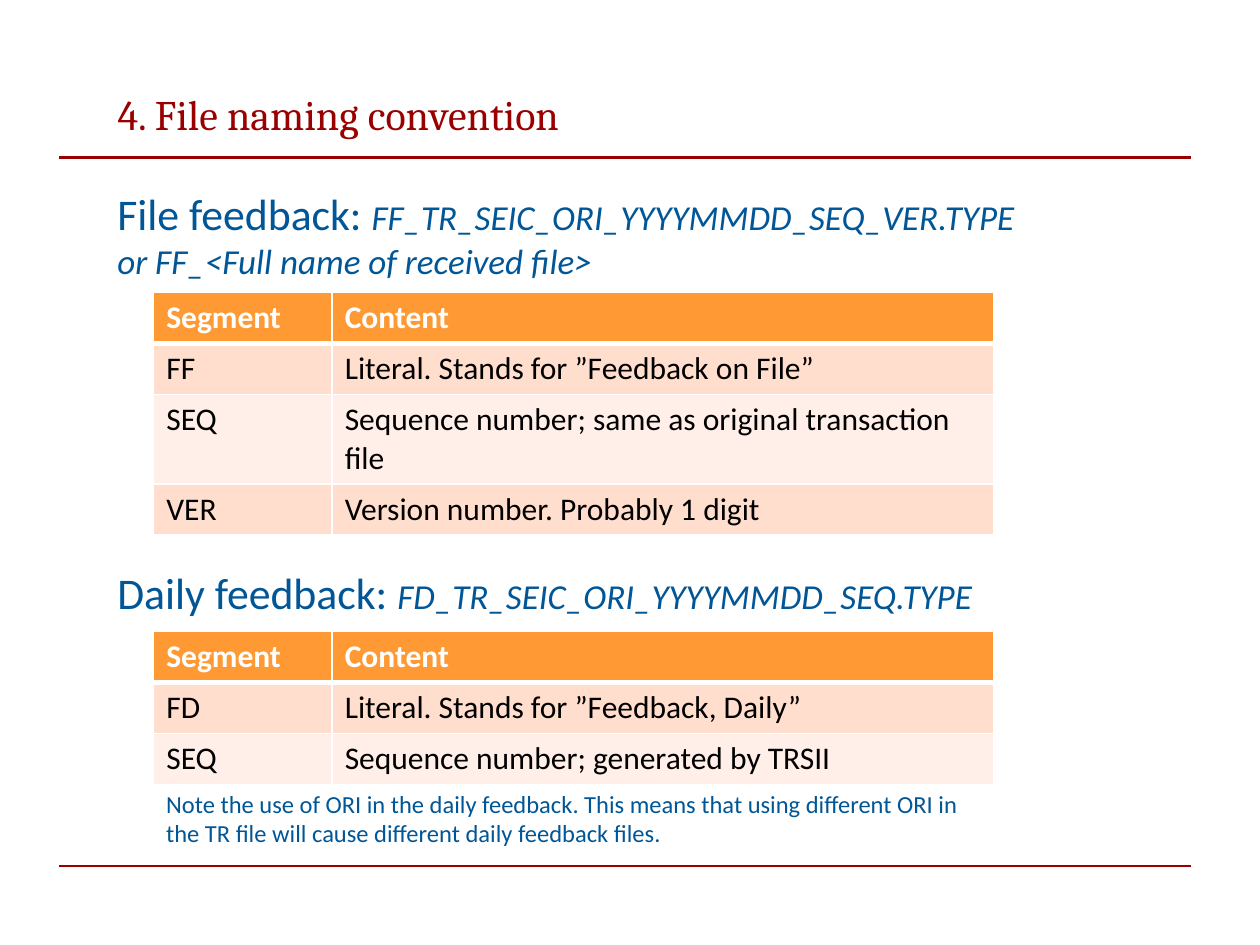
from typing import NamedTuple

from lxml import etree
from pptx import Presentation
from pptx import util as u
from pptx.dml.color import RGBColor
from pptx.enum import shapes, text
from pptx.oxml.ns import qn

RED = RGBColor(0x99, 0x00, 0x00)
BLUE = RGBColor(0x00, 0x56, 0x96)
ORANGE = RGBColor(0xFF, 0x99, 0x33)
PEACH = RGBColor(0xFF, 0xDE, 0xCE)
PALE = RGBColor(0xFF, 0xEF, 0xE8)
WHITE = RGBColor(0xFF, 0xFF, 0xFF)
BLACK = RGBColor(0x00, 0x00, 0x00)

# Grid of 120 columns by 90 rows
WIDTH, HEIGHT = u.Inches(10), u.Inches(7.5)
MARGIN, INDENT = 10, 14.64
SEGMENT_COLS, CONTENT_COLS = 17, 63
TABLE_COLS = SEGMENT_COLS + CONTENT_COLS
ROW = 4.87


class Box(NamedTuple):
    col: float
    row: float
    cols: float
    rows: float


class Heading(NamedTuple):
    box: Box
    lead: str
    pattern: list[str]


class Segments(NamedTuple):
    top: float
    rows: list[tuple[str, str]]


HEADINGS = [
    Heading(Box(MARGIN, 52.56, 104.88, 7.56), "Daily feedback: ",
            ["FD_TR_SEIC_ORI_YYYYMMDD_SEQ.TYPE"]),
    Heading(Box(MARGIN, 16.7, 104.88, 11.14), "File feedback: ",
            ["FF_TR_SEIC_ORI_YYYYMMDD_SEQ_VER.TYPE",
             "or FF_<Full name of received file>"]),
]
TABLES = [
    Segments(27.84, [
        ("FF", "Literal. Stands for ”Feedback on File”"),
        ("SEQ", "Sequence number; same as original transaction file"),
        ("VER", "Version number. Probably 1 digit")]),
    Segments(60.12, [
        ("FD", "Literal. Stands for ”Feedback, Daily”"),
        ("SEQ", "Sequence number; generated by TRSII")]),
]
NOTE = ("Note the use of ORI in the daily feedback. This means that using different "
        "ORI in the TR file will cause different daily feedback files.")


def across(cols: float) -> int:
    return round(WIDTH * cols / 120)


def down(rows: float) -> int:
    return round(HEIGHT * rows / 90)


def place(box: Box) -> tuple[int, int, int, int]:
    return across(box.col), down(box.row), across(box.cols), down(box.rows)


def style(run, size: float, color: RGBColor, name: str = "Calibri",
          bold: bool = False, italic: bool = False) -> None:
    font = run.font
    font.size, font.name, font.bold, font.italic = u.Pt(size), name, bold, italic
    font.color.rgb = color


def add_rule(slide, row: float) -> None:
    rule = slide.shapes.add_connector(shapes.MSO_CONNECTOR.STRAIGHT, across(5.64),
                                      down(row), across(113.4), down(row))
    rule.line.color.rgb = RED
    rule.line.width = u.Pt(1.25)
    etree.SubElement(rule._element.spPr, qn("a:effectLst"))


def add_frame(slide, box: Box):
    frame = slide.shapes.add_textbox(*place(box)).text_frame
    frame.word_wrap = True
    frame.vertical_anchor = text.MSO_ANCHOR.MIDDLE
    return frame


def add_heading(slide, heading: Heading) -> None:
    line = add_frame(slide, heading.box).paragraphs[0]
    line.text = heading.lead
    style(line.runs[0], 25, BLUE)
    for index, part in enumerate(heading.pattern):
        if index:
            line.add_line_break()
        run = line.add_run()
        run.text = part
        style(run, 20, BLUE, italic=True)


def add_borders(cell, top: float, bottom: float) -> None:
    for side, points in (("L", 1), ("R", 1), ("T", top), ("B", bottom)):
        border = etree.SubElement(cell._tc.get_or_add_tcPr(), qn(f"a:ln{side}"),
                                  w=str(u.Pt(points)))
        fill = etree.SubElement(border, qn("a:solidFill"))
        etree.SubElement(fill, qn("a:srgbClr"), val=str(WHITE))


def add_segments(slide, segments: Segments) -> None:
    rows = [("Segment", "Content"), *segments.rows]
    box = Box(INDENT, segments.top, TABLE_COLS, ROW * len(rows))
    table = slide.shapes.add_table(len(rows), 2, *place(box)).table
    for column, cols in zip(table.columns, (SEGMENT_COLS, CONTENT_COLS)):
        column.width = across(cols)
    for r, entries in enumerate(rows):
        table.rows[r].height = down(ROW)
        header = r == 0
        for c, entry in enumerate(entries):
            cell = table.cell(r, c)
            cell.text = entry
            style(cell.text_frame.paragraphs[0].runs[0], 18,
                  WHITE if header else BLACK, bold=header)
            add_borders(cell, top=3 if r == 1 else 1, bottom=3 if header else 1)
            cell.fill.solid()
            cell.fill.fore_color.rgb = ORANGE if header else (PALE, PEACH)[r % 2]


def main() -> None:
    deck = Presentation()
    deck.slide_width, deck.slide_height = WIDTH, HEIGHT
    slide = deck.slides.add_slide(deck.slide_layouts[5])

    # Rules above and below the content
    for row in (15, 82.5):
        add_rule(slide, row)

    # Title
    title = slide.shapes.title
    title.left, title.top, title.width, title.height = place(Box(MARGIN, 2.64, 104, 11.16))
    title.text_frame.text = "4. File naming convention"
    title.text_frame.vertical_anchor = text.MSO_ANCHOR.BOTTOM
    heading = title.text_frame.paragraphs[0]
    heading.alignment = text.PP_ALIGN.LEFT
    style(heading.runs[0], 24, RED, "Cambria")

    # Feedback sections
    for segments in TABLES:
        add_segments(slide, segments)
    for section in HEADINGS:
        add_heading(slide, section)

    # Closing note
    note = add_frame(slide, Box(INDENT, 73.32, TABLE_COLS, 9.24))
    note.text = NOTE
    style(note.paragraphs[0].runs[0], 14, BLUE)

    deck.save("out.pptx")


if __name__ == "__main__":
    main()
